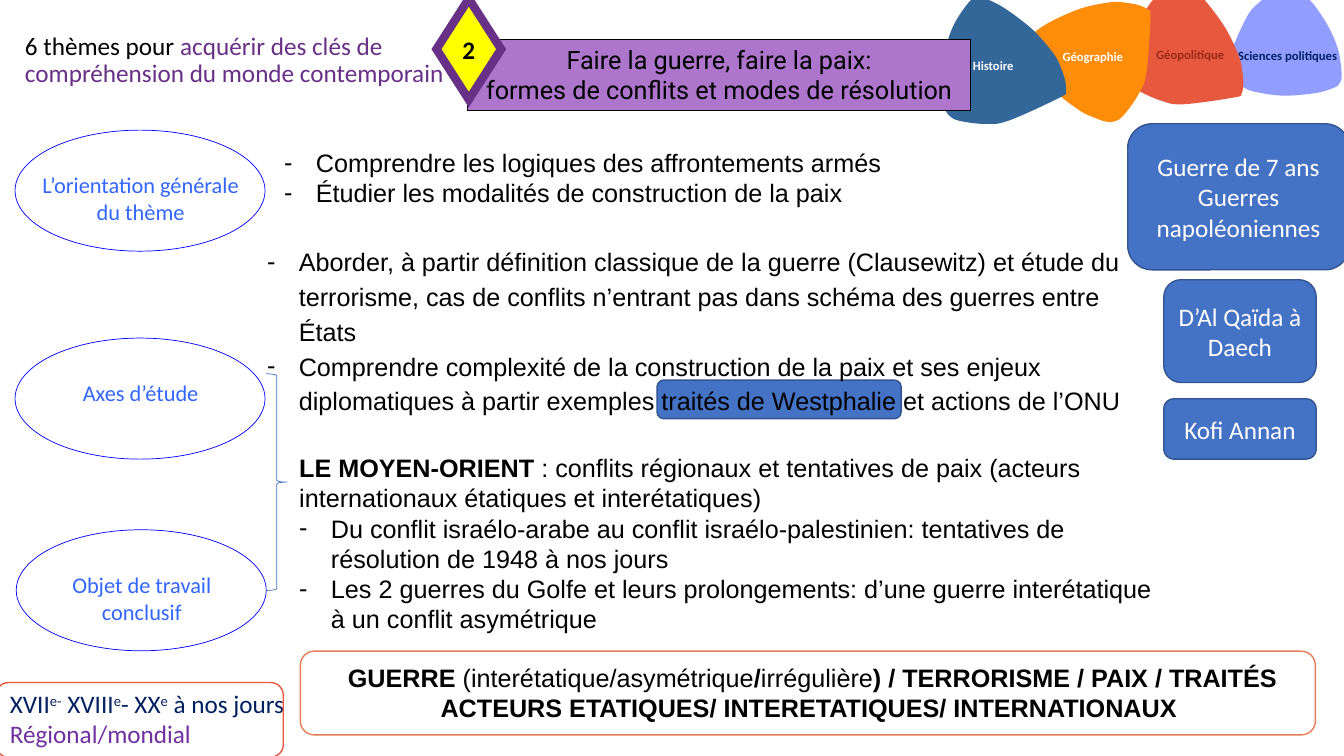
from dataclasses import dataclass

from lxml.etree import SubElement
from pptx import Presentation
from pptx.dml.color import RGBColor
from pptx.enum.shapes import MSO_SHAPE as Preset
from pptx.enum.text import MSO_ANCHOR as Anchor, MSO_AUTO_SIZE as AutoSize, PP_ALIGN as Align
from pptx.oxml.ns import qn
from pptx.util import Cm, Pt


@dataclass(frozen=True)
class Theme:
    black: str = "000000"
    white: str = "FFFFFF"
    blue: str = "4472C4"
    dark_blue: str = "325491"
    navy: str = "002060"
    oval_line: str = "0000FF"
    oval_text: str = "3366FF"
    purple: str = "683086"
    violet: str = "7030A0"
    lilac: str = "AE75CD"
    yellow: str = "FFFF00"
    red: str = "E7593F"
    dark_red: str = "992918"
    coral: str = "E87C58"
    periwinkle: str = "919DFF"
    orange: str = "FF8D09"
    petrol: str = "336699"
    body_size: float = 18
    oval_size: float = 16
    petal_size: float = 9
    body_font: str = "Arial"
    label_font: str = "Calibri"
    banner_font: str = "Roboto"


THEME = Theme()
BOLD, PLAIN, RAISED = {"bold": True}, {"bold": False}, {"raised": True}
PETAL = [(1, 23), (2, 15), (7, 10), (23, 4), (50, 0), (74, 2), (85, 6), (94, 11), (100, 17), (100, 24),
         (85, 68), (74, 84), (59, 97), (51, 100), (44, 98), (35, 91), (27, 83), (14, 64), (5, 44)]


@dataclass(frozen=True)
class Box:
    left: float
    top: float
    width: float
    height: float

    def inner(self, left, top, width, height):
        return Box(self.left + left, self.top + top, width, height)

    def lengths(self):
        return Cm(self.left), Cm(self.top), Cm(self.width), Cm(self.height)


def color(code):
    return RGBColor.from_string(code)


def write_text(frame, paras, font=THEME.label_font, size=THEME.body_size, ink=THEME.black, bold=False,
               align=Align.LEFT, anchor=Anchor.TOP, spacing=1.0, bullets=(), margin=None):
    frame.word_wrap = True
    frame.auto_size = AutoSize.NONE
    frame.vertical_anchor = anchor
    side, edge = (0.25, 0.13) if margin is None else (margin, margin)
    frame.margin_left = frame.margin_right = Cm(side)
    frame.margin_top = frame.margin_bottom = Cm(edge)
    for index, spans in enumerate(paras):
        para = frame.paragraphs[0] if index == 0 else frame.add_paragraph()
        para.alignment = align
        para.line_spacing = spacing
        para.space_before = para.space_after = Pt(0)
        bulleted = index in bullets
        indent = Cm(0.8) if bulleted else 0
        properties = para._p.get_or_add_pPr()
        properties.set("marL", str(indent))
        properties.set("indent", str(-indent))
        if bulleted:
            SubElement(properties, qn("a:buChar")).set("char", "-")
        else:
            SubElement(properties, qn("a:buNone"))
        for words, style in [(spans, {})] if isinstance(spans, str) else spans:
            span = para.add_run()
            span.text = words
            span.font.name = font
            span.font.size = Pt(size)
            span.font.bold = style.get("bold", bold)
            span.font.color.rgb = color(style.get("ink", ink))
            if style.get("raised"):
                span._r.get_or_add_rPr().set("baseline", "30000")


def paint(shape, fill=None, line=None, weight=1):
    shape.shadow.inherit = False
    if fill:
        shape.fill.solid()
        shape.fill.fore_color.rgb = color(fill)
    else:
        shape.fill.background()
    if line:
        shape.line.color.rgb = color(line)
        shape.line.width = Pt(weight)
        SubElement(shape.line._ln, qn("a:miter")).set("lim", "800000")
    else:
        shape.line.fill.background()
    return shape


def add_preset(page, preset, box, **look):
    return paint(page.shapes.add_shape(preset, *box.lengths()), **look)


def add_label(page, box, paras, **style):
    write_text(page.shapes.add_textbox(*box.lengths()).text_frame, paras, **style)


def fill_placeholder(page, index, box, paras, **style):
    holder = page.placeholders[index]
    holder.left, holder.top, holder.width, holder.height = box.lengths()
    write_text(holder.text_frame, paras, **style)


def curve_outline(outline, points):
    for old in outline.findall(qn("a:lnTo")):
        outline.remove(old)
    close = outline.find(qn("a:close"))
    count = len(points)
    for index in range(count):
        before, start, end, after = (points[(index + shift) % count] for shift in (-1, 0, 1, 2))
        curve = SubElement(outline, qn("a:cubicBezTo"))
        leaving = [b + (c - a) / 6 for a, b, c in zip(before, start, end)]
        arriving = [c - (d - b) / 6 for b, c, d in zip(start, end, after)]
        for x, y in (leaving, arriving, end):
            point = SubElement(curve, qn("a:pt"))
            point.set("x", str(round(x)))
            point.set("y", str(round(y)))
    outline.append(close)


def add_petal(page, box, turn, fill):
    anchors = [(Cm(x * box.width / 100), Cm(y * box.height / 100)) for x, y in PETAL]
    builder = page.shapes.build_freeform(*anchors[0])
    builder.add_line_segments(anchors[1:])
    petal = paint(builder.convert_to_shape(Cm(box.left), Cm(box.top)), fill)
    petal.rotation = turn
    low_x, low_y = (min(values) for values in zip(*anchors))
    outline = next(petal._element.iter(qn("a:path")))
    curve_outline(outline, [(x - low_x, y - low_y) for x, y in anchors])


def add_petals(page, box):
    for name, petal, turn, fill, label, ink in (
        ("Sciences politiques", (7.6, -0.36, 2.97, 2.77), 183.6, THEME.periwinkle, (7.75, 1.14, 2.82, 0.28), THEME.navy),
        ("Géopolitique", (4.7, 0, 3.33, 2.77), 60, THEME.red, (5.46, 1.09, 2.49, 0.48), THEME.dark_red),
        ("Géographie", (2.75, 0.15, 3.23, 2.97), 343.9, THEME.orange, (3.02, 1.16, 2.46, 0.48), THEME.white),
        ("Histoire", (0, 0.33, 3.35, 3.02), 45, THEME.petrol, (0.24, 1.38, 3, 0.56), THEME.white),
    ):
        add_petal(page, box.inner(*petal), turn, fill)
        add_label(page, box.inner(*label), [name], size=THEME.petal_size, ink=ink, bold=True,
                  align=Align.CENTER, margin=0.08)


def add_header(page, box):
    fill_placeholder(page, 0, box.inner(0.38, 0.28, 11.58, 2.51), [[
        ("6 thèmes pour ", {}),
        ("acquérir des clés de compréhension du monde contemporain", {"ink": THEME.purple})]],
        anchor=Anchor.MIDDLE, spacing=0.9)
    add_petals(page, box.inner(23.29, 0, 10.57, 3.3))
    banner = add_preset(page, Preset.RECTANGLE, box.inner(11.79, 0.99, 12.67, 1.8),
                        fill=THEME.lilac, line=THEME.black, weight=0.75)
    write_text(banner.text_frame, ["Faire la guerre, faire la paix:", "formes de conflits et modes de résolution"],
               font=THEME.banner_font, align=Align.CENTER)
    number = add_preset(page, Preset.DIAMOND, box.inner(11, -0.03, 1.63, 2.54),
                        fill=THEME.yellow, line=THEME.purple, weight=6)
    write_text(number.text_frame, ["2"], bold=True, align=Align.CENTER, anchor=Anchor.MIDDLE, margin=0)


def add_ovals(page, box):
    for name, left, top in (("L’orientation générale du thème", 0, 0), ("Axes d’étude", 0, 5.24),
                            ("Objet de travail conclusif", 0.03, 10.07)):
        oval = box.inner(left, top, box.width, 3.05)
        add_preset(page, Preset.OVAL, oval, line=THEME.oval_line, weight=0.5)
        add_label(page, oval.inner(0.23, 0.91, 5.87, 1.63), [name], size=THEME.oval_size,
                  ink=THEME.oval_text, align=Align.CENTER)
    add_preset(page, Preset.RIGHT_BRACE, box.inner(6.33, 6.14, 0.53, 5.46), line=THEME.blue, weight=0.5)


def add_lists(page, box):
    highlight = add_preset(page, Preset.ROUNDED_RECTANGLE, box.inner(10.08, 6, 6.15, 0.97),
                           fill=THEME.blue, line=THEME.dark_blue)
    page.shapes[0]._element.addprevious(highlight._element)
    fill_placeholder(page, 2, box.inner(0.43, 0, 26.11, 1.8), [
        "Comprendre les logiques des affrontements armés",
        "Étudier les modalités de construction de la paix"], font=THEME.body_font, bullets=(0, 1))
    fill_placeholder(page, 4, box.inner(0, 2.39, 22.89, 4.67), [
        "Aborder, à partir définition classique de la guerre (Clausewitz) et étude du terrorisme, "
        "cas de conflits n’entrant pas dans schéma des guerres entre États",
        "Comprendre complexité de la construction de la paix et ses enjeux diplomatiques à partir "
        "exemples traités de Westphalie et actions de l’ONU"],
        font=THEME.body_font, spacing=1.15, bullets=(0, 1))
    fill_placeholder(page, 3, box.inner(0.81, 7.69, 22.43, 4.88), [
        [("LE MOYEN-ORIENT ", BOLD),
         (": conflits régionaux et tentatives de paix (acteurs internationaux étatiques et interétatiques)", {})],
        "Du conflit israélo-arabe au conflit israélo-palestinien: tentatives de résolution de 1948 à nos jours",
        "Les 2 guerres du Golfe et leurs prolongements: d’une guerre interétatique à un conflit asymétrique"],
        font=THEME.body_font, bullets=(1, 2))


def add_examples(page, box):
    for paras, place in (
        (["Guerre de 7 ans", "Guerres napoléoniennes"], (0, 0, 5.59, 3.68)),
        (["D’Al Qaïda à Daech"], (0.91, 3.93, 3.84, 2.59)),
        (["Kofi Annan"], (0.91, 6.93, 3.84, 1.52)),
    ):
        card = add_preset(page, Preset.ROUNDED_RECTANGLE, box.inner(*place), fill=THEME.blue, line=THEME.dark_blue)
        write_text(card.text_frame, paras, ink=THEME.white, align=Align.CENTER, anchor=Anchor.MIDDLE)


def add_footer(page, box):
    fill_placeholder(page, 1, box.inner(8.23, 0.15, 24.49, 1.8), [
        [("GUERRE ", {}), ("(interétatique/asymétrique", PLAIN), ("/", {}), ("irrégulière", PLAIN),
         (") / TERRORISME / PAIX / TRAITÉS", {})],
        "ACTEURS ETATIQUES/ INTERETATIQUES/ INTERNATIONAUX "],
        font=THEME.body_font, bold=True, align=Align.CENTER)
    add_label(page, box.inner(0, 0.81, 8.23, 1.8), [
        [("XVII", {}), ("e-", RAISED), (" XVIII", {}), ("e", RAISED), ("- XX", {}), ("e", RAISED),
         (" à nos jours", {})],
        [("Régional/mondial", {"ink": THEME.violet})]], ink=THEME.navy)
    add_preset(page, Preset.ROUNDED_RECTANGLE, box.inner(-0.1, 0.79, 7.24, 1.88), line=THEME.red)
    add_preset(page, Preset.ROUNDED_RECTANGLE, box.inner(7.57, 0, 25.58, 2.11), line=THEME.coral)


def main():
    deck = Presentation()
    deck.slide_width, deck.slide_height = Cm(33.87), Cm(19.05)
    page = deck.slides.add_slide(deck.slide_layouts.get_by_name("Comparison"))
    add_header(page, Box(0, 0, 33.87, 3.1))
    add_lists(page, Box(6.48, 3.58, 22.89, 12.6))
    add_ovals(page, Box(0.38, 3.28, 6.3, 13.13))
    add_examples(page, Box(28.42, 3.12, 5.59, 8.46))
    add_footer(page, Box(0, 16.41, 33.87, 2.64))
    deck.save("out.pptx")


if __name__ == "__main__":
    main()
